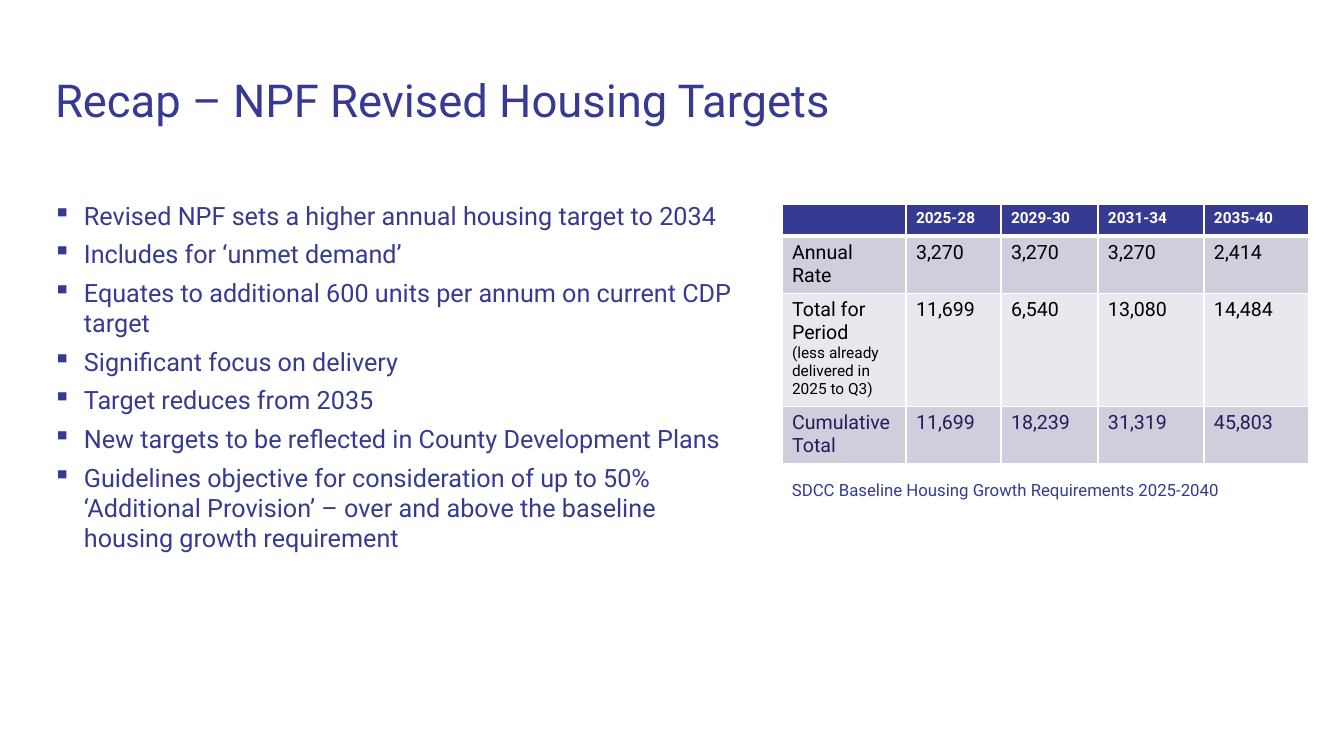
from pptx import Presentation
from pptx import util as u
from pptx.dml.color import RGBColor
from pptx.enum import text
from pptx.oxml.xmlchemy import OxmlElement

INDIGO = RGBColor(0x36, 0x3A, 0x92)
PLUM = RGBColor(0x27, 0x1B, 0x5B)
BLACK = RGBColor(0, 0, 0)
WHITE = RGBColor(0xFF, 0xFF, 0xFF)
BAND = RGBColor(0xCE, 0xCE, 0xDC)
PALE = RGBColor(0xE8, 0xE8, 0xEE)
FONT = "Roboto"

POINTS = [
    "Revised NPF sets a higher annual housing target to 2034",
    "Includes for ‘unmet demand’",
    "Equates to additional 600 units per annum on current CDP target",
    "Significant focus on delivery",
    "Target reduces from 2035",
    "New targets to be reflected in County Development Plans",
    "Guidelines objective for consideration of up to 50% ‘Additional Provision’ "
    "– over and above the baseline housing growth requirement",
]
COLUMNS = [124, 95, 97, 106, 105]
ROWS = [
    (32, INDIGO, WHITE, 11, ["", "2025-28", "2029-30", "2031-34", "2035-40"]),
    (57, BAND, BLACK, 14, ["Annual Rate", "3,270", "3,270", "3,270", "2,414"]),
    (113, PALE, BLACK, 14, ["Total for Period", "11,699", "6,540", "13,080", "14,484"]),
    (57, BAND, PLUM, 14, ["Cumulative Total", "11,699", "18,239", "31,319", "45,803"]),
]
PERIOD_NOTE = "(less already delivered in 2025 to Q3)"


def px(n):
    return u.Emu(round(n * 12192000 / 1344))


def add_run(p, words, size, color, bold=False):
    r = p.add_run()
    r.text = words
    r.font.name = FONT
    r.font.size = u.Pt(size)
    r.font.bold = bold
    r.font.color.rgb = color


def add_frame(s, box):
    tf = s.shapes.add_textbox(*map(px, box)).text_frame
    tf.word_wrap = True
    return tf


def add_title(s, box):
    tf = add_frame(s, box)
    tf.margin_left = tf.margin_top = tf.margin_right = tf.margin_bottom = 0
    tf.vertical_anchor = text.MSO_ANCHOR.MIDDLE
    add_run(tf.paragraphs[0], "Recap – NPF Revised Housing Targets", 32.4, INDIGO)


def add_points(s, box):
    tf = add_frame(s, box)
    for i, point in enumerate(POINTS):
        p = tf.add_paragraph() if i else tf.paragraphs[0]
        pPr = p._p.get_or_add_pPr()
        pPr.set("marL", str(px(31)))
        pPr.set("indent", str(px(-31)))
        bullet = OxmlElement("a:buChar")
        bullet.set("char", "▪")
        pPr.append(bullet)
        p.space_after = u.Pt(6)
        add_run(p, point, 18, INDIGO)


def set_borders(cell, bottom):
    tcPr = cell._tc.get_or_add_tcPr()
    for i, (side, width) in enumerate([("L", 1), ("R", 1), ("T", 1), ("B", bottom)]):
        line = OxmlElement(f"a:ln{side}")
        line.set("w", str(u.Pt(width)))
        fill = OxmlElement("a:solidFill")
        color = OxmlElement("a:srgbClr")
        color.set("val", str(WHITE))
        fill.append(color)
        line.append(fill)
        tcPr.insert(i, line)


def add_targets(s, left, top):
    heights = [row[0] for row in ROWS]
    table = s.shapes.add_table(
        len(ROWS), len(COLUMNS), px(left), px(top), px(sum(COLUMNS)), px(sum(heights))
    ).table
    for column, width in zip(table.columns, COLUMNS):
        column.width = px(width)
    for i, (height, fill, color, size, values) in enumerate(ROWS):
        table.rows[i].height = px(height)
        for j, value in enumerate(values):
            cell = table.cell(i, j)
            cell.fill.solid()
            cell.fill.fore_color.rgb = fill
            set_borders(cell, 1 if i else 3)
            if i == 1:
                cell._tc.tcPr.find("{*}lnT").set("w", str(u.Pt(3)))
            p = cell.text_frame.paragraphs[0]
            if value:
                add_run(p, value, size, color, bold=i == 0)
            else:
                end = OxmlElement("a:endParaRPr")
                end.set("sz", str(size * 100))
                p._p.append(end)
    add_run(table.cell(2, 0).text_frame.add_paragraph(), PERIOD_NOTE, 11, BLACK)


def add_caption(s, box):
    tf = add_frame(s, box)
    add_run(tf.paragraphs[0], "SDCC Baseline Housing Growth Requirements 2025-2040", 12, INDIGO)


def main():
    prs = Presentation()
    prs.slide_width, prs.slide_height = px(1344), px(756)
    s = prs.slides.add_slide(prs.slide_layouts[6])
    add_title(s, (55, 52, 870, 95))
    add_points(s, (43, 195, 700, 467))
    add_targets(s, 782, 204)
    add_caption(s, (782, 475, 526, 30))
    prs.save("out.pptx")


if __name__ == "__main__":
    main()
